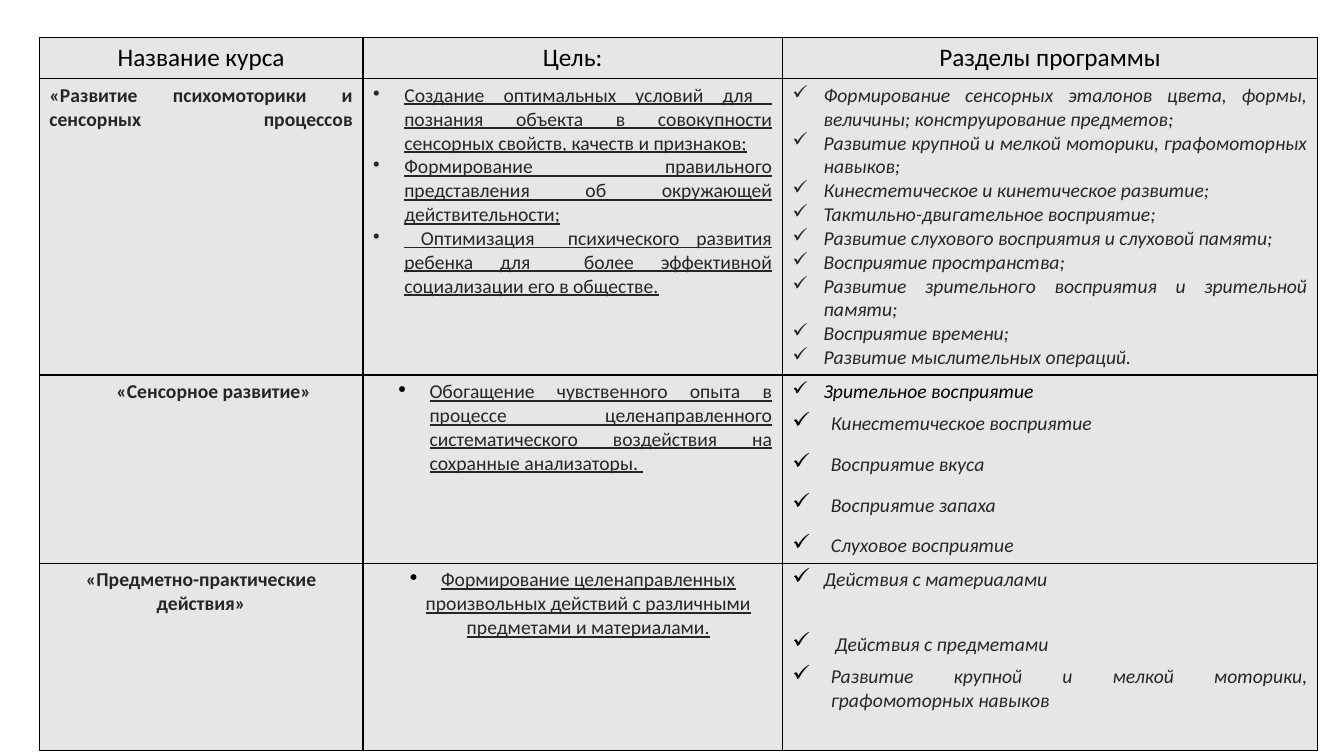
import pptx
import pptx.dml.color
import pptx.enum.text
import pptx.oxml.ns
import pptx.util
from lxml import etree

Inches, Pt = pptx.util.Inches, pptx.util.Pt
ALIGN = pptx.enum.text.PP_ALIGN
BLACK, DARK, GREY = "000000", "262626", "E7E6E6"

# Content: each row is course, goal, sections; each line is (style, text)
HEADINGS = ["Название курса", "Цель:", "Разделы программы"]
COURSES = [
    (
        [("course", "«Развитие психомоторики и сенсорных процессов\v")],
        [
            ("goal", "Создание оптимальных условий для  познания объекта в совокупности "
                     "сенсорных свойств, качеств и признаков;"),
            ("goal", "Формирование правильного представления об окружающей действительности;"),
            ("goal", " Оптимизация  психического развития ребенка для  более эффективной "
                     "социализации его в обществе."),
        ],
        [("section", text) for text in (
            "Формирование сенсорных эталонов цвета, формы, величины; конструирование предметов;",
            "Развитие крупной и мелкой моторики, графомоторных навыков;",
            "Кинестетическое и кинетическое развитие;",
            "Тактильно-двигательное восприятие;",
            "Развитие слухового восприятия и слуховой памяти;",
            "Восприятие пространства;",
            "Развитие зрительного восприятия и зрительной памяти;",
            "Восприятие времени;",
            "Развитие мыслительных операций.",
        )],
    ),
    (
        [("course indented", "«Сенсорное развитие»")],
        [("goal indented", "Обогащение чувственного опыта в процессе целенаправленного "
                           "систематического воздействия на сохранные анализаторы. ")],
        [("section black", "Зрительное восприятие")] + [("section spaced", text) for text in (
            "Кинестетическое восприятие",
            "Восприятие вкуса",
            "Восприятие запаха",
            "Слуховое восприятие",
        )],
    ),
    (
        [("course centred", "«Предметно-практические действия»")],
        [("goal centred", "Формирование целенаправленных произвольных действий "
                          "с различными предметами и материалами.")],
        [
            ("section apart", "Действия с материалами"),
            ("section close", " Действия с предметами"),
            ("section spaced", "Развитие крупной и мелкой моторики, графомоторных навыков"),
        ],
    ),
]

# Paragraph styles
BIG_BULLET = {"bullet_color": BLACK, "bullet_size": 115}
COURSE = {"bold": True}
GOAL = {"underline": True, "bullet": "•", "left": 0.31, "hang": 0.31}
SECTION = {"italic": True, "bullet": "✓", "left": 0.31, "hang": 0.31}
SPACED = {**SECTION, **BIG_BULLET, "left": 0.38, "hang": 0.38, "before": 6, "after": 6}
STYLES = {
    "heading": {"size": 18, "color": BLACK, "align": ALIGN.CENTER},
    "course": COURSE,
    "course indented": {**COURSE, "align": ALIGN.CENTER, "left": 0.25},
    "course centred": {**COURSE, "align": ALIGN.CENTER, "before": 6, "after": 6},
    "goal": GOAL,
    "goal indented": {**GOAL, **BIG_BULLET, "left": 0.56},
    "goal centred": {**GOAL, **BIG_BULLET, "align": ALIGN.CENTER, "before": 6, "after": 6},
    "section": SECTION,
    "section black": {**SECTION, "color": BLACK, "align": ALIGN.LEFT},
    "section spaced": SPACED,
    "section apart": {**SPACED, "left": 0.31, "hang": 0.31, "after": 23},
    "section close": {**SPACED, "after": 0},
}

# Layout
TABLE_LEFT, TABLE_TOP = 0.39, 0.37
COLUMN_WIDTHS = [3.21, 4.16, 5.31]
ROW_HEIGHTS = [0.41, 2.94, 1.86, 1.86]


def rgb(value):
    return pptx.dml.color.RGBColor.from_string(value)


def add_xml(parent, tag, **attributes):
    return etree.SubElement(parent, pptx.oxml.ns.qn(tag), attributes)


def add_bullet(properties, style):
    if "bullet_color" in style:
        color = add_xml(properties, "a:buClr")
        add_xml(color, "a:srgbClr", val=style["bullet_color"])
        add_xml(properties, "a:buSzPct", val=str(style["bullet_size"] * 1000))
    add_xml(properties, "a:buChar", char=style["bullet"])


def write_paragraph(paragraph, style, text):
    paragraph.alignment = style.get("align", ALIGN.JUSTIFY)
    paragraph.space_before = Pt(style.get("before", 0))
    paragraph.space_after = Pt(style.get("after", 0))
    properties = paragraph._p.get_or_add_pPr()
    properties.set("marL", str(Inches(style.get("left", 0))))
    properties.set("indent", str(-Inches(style.get("hang", 0))))
    if "bullet" in style:
        add_bullet(properties, style)
    words, line_break, _ = text.partition("\v")
    run = paragraph.add_run()
    run.text = words
    font = run.font
    font.name = "Calibri"
    font.size = Pt(style.get("size", 14))
    font.color.rgb = rgb(style.get("color", DARK))
    font.bold = style.get("bold", False)
    font.italic = style.get("italic", False)
    font.underline = style.get("underline", False)
    if line_break:
        paragraph.add_line_break()
        paragraph.font.size = font.size


def add_borders(cell):
    properties = cell._tc.get_or_add_tcPr()
    for side in ("a:lnL", "a:lnR", "a:lnT", "a:lnB"):
        line = add_xml(properties, side, w=str(Pt(1)))
        add_xml(add_xml(line, "a:solidFill"), "a:srgbClr", val=BLACK)


def fill_cell(cell, lines):
    add_borders(cell)
    cell.fill.solid()
    cell.fill.fore_color.rgb = rgb(GREY)
    frame = cell.text_frame
    for index, (style_name, text) in enumerate(lines):
        paragraph = frame.add_paragraph() if index else frame.paragraphs[0]
        write_paragraph(paragraph, STYLES[style_name], text)


def main():
    deck = pptx.Presentation()
    deck.slide_width, deck.slide_height = Inches(13.33), Inches(7.5)
    slide = deck.slides.add_slide(deck.slide_layouts[6])

    # Table of courses
    rows = [[[("heading", heading)] for heading in HEADINGS], *COURSES]
    table = slide.shapes.add_table(
        len(rows), len(HEADINGS), Inches(TABLE_LEFT), Inches(TABLE_TOP),
        Inches(sum(COLUMN_WIDTHS)), Inches(sum(ROW_HEIGHTS))).table
    table.first_row = table.horz_banding = False
    for column, width in zip(table.columns, COLUMN_WIDTHS):
        column.width = Inches(width)
    for row, height, contents in zip(table.rows, ROW_HEIGHTS, rows):
        row.height = Inches(height)
        for cell, lines in zip(row.cells, contents):
            fill_cell(cell, lines)

    deck.save("out.pptx")


if __name__ == "__main__":
    main()
